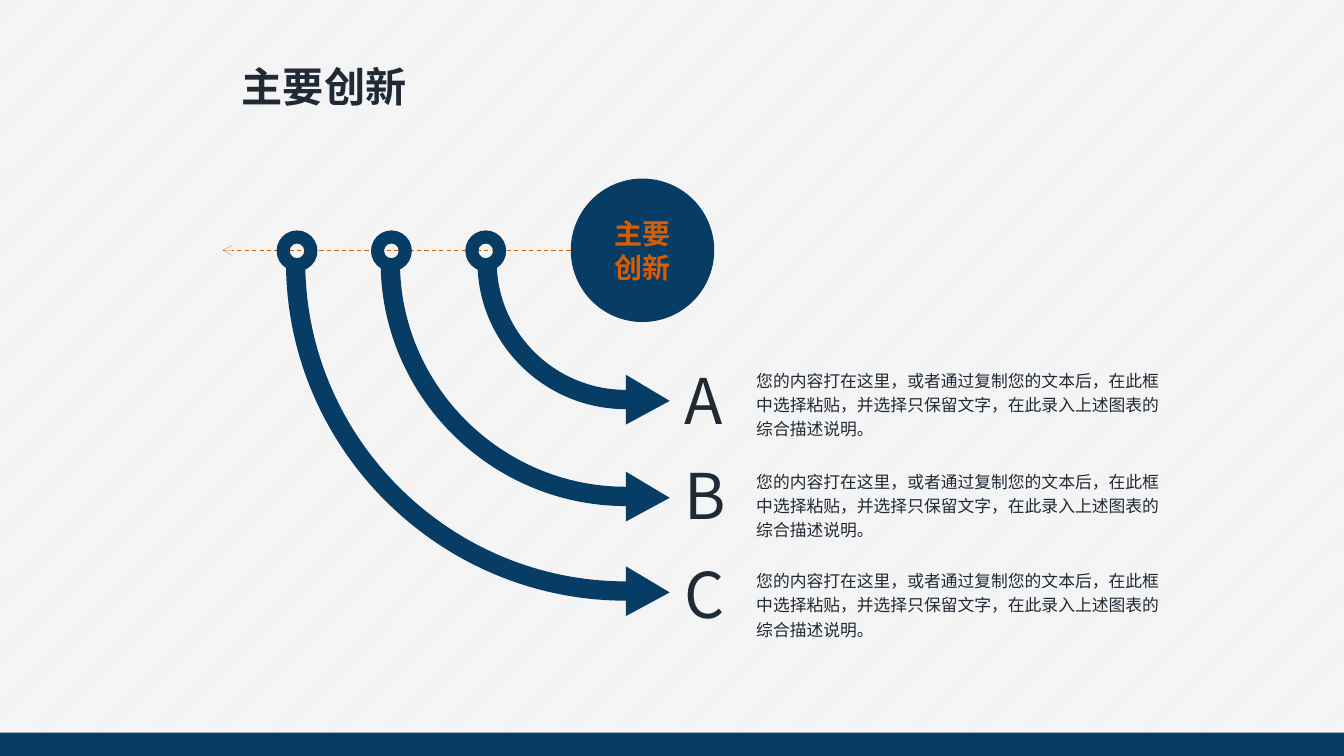
from lxml.etree import SubElement
from pptx import Presentation
from pptx.dml.color import RGBColor
from pptx.enum.dml import MSO_LINE, MSO_PATTERN
from pptx.enum.shapes import MSO_CONNECTOR, MSO_SHAPE
from pptx.enum.text import MSO_ANCHOR, MSO_AUTO_SIZE, PP_ALIGN
from pptx.oxml.ns import qn
from pptx.util import Pt

TITLE = "主要创新"
HUB_LINES = ["主要", "创新"]
DESCRIPTION = "您的内容打在这里，或者通过复制您的文本后，在此框中选择粘贴，并选择只保留文字，在此录入上述图表的综合描述说明。"
BRANCHES = [
    {"letter": "A", "ring_x": 347, "radius": 105.1, "letter_top": 254.9, "letter_width": 43.9, "text_top": 258.8},
    {"letter": "B", "ring_x": 279.6, "radius": 174.3, "letter_top": 323, "letter_width": 40.3, "text_top": 331},
    {"letter": "C", "ring_x": 212.2, "radius": 241.9, "letter_top": 393.4, "letter_width": 42.5, "text_top": 402},
]
COLORS = {"navy": "073C65", "orange": "D85C00", "ink": "202A36", "paper": "F2F2F2", "stripe": "FFFFFF"}
FONT = "Noto Sans CJK SC"
WIDTH, HEIGHT = 960, 540
ARC_X, ARC_Y = 447.1, 187.2
ARC_STRETCH = 0.9
BAND = 13.8
RING_Y, RING_SIZE = 179.2, 29.2
AXIS_Y = 178.8
HUB_LEFT, HUB_SIZE = 407.7, 102.5
CURVE = 0.55
UNITS = 100


def rgb(name):
    return RGBColor.from_string(COLORS[name])


def paint(shape):
    shape.shadow.inherit = False
    shape.fill.solid()
    shape.fill.fore_color.rgb = rgb("navy")
    shape.line.fill.background()
    return shape


def add_preset(slide, kind, left, top, width, height):
    return paint(slide.shapes.add_shape(kind, Pt(left), Pt(top), Pt(width), Pt(height)))


def add_run(paragraph, text, size, color, font=FONT, bold=False):
    run = paragraph.add_run()
    run.text = text
    run.font.size = Pt(size)
    run.font.bold = bold
    run.font.color.rgb = rgb(color)
    run.font.name = font
    SubElement(run.font._element, qn("a:ea"), typeface=FONT)


def set_insets(frame, horizontal, vertical):
    frame.margin_left = frame.margin_right = Pt(horizontal)
    frame.margin_top = frame.margin_bottom = Pt(vertical)


def add_text(slide, box, text, size, insets=(6, 3), wrap=False, anchor=MSO_ANCHOR.TOP,
             spacing=None, font=FONT, bold=False):
    frame = slide.shapes.add_textbox(*map(Pt, box)).text_frame
    set_insets(frame, *insets)
    frame.word_wrap = wrap
    frame.auto_size = MSO_AUTO_SIZE.SHAPE_TO_FIT_TEXT
    frame.vertical_anchor = anchor
    paragraph = frame.paragraphs[0]
    if spacing:
        paragraph.line_spacing = spacing
    add_run(paragraph, text, size, "ink", font, bold)


def bend(segment, start, starts_vertical):
    point = segment.find(qn("a:pt"))
    x0, y0 = (int(start.get(axis)) for axis in "xy")
    x1, y1 = (int(point.get(axis)) for axis in "xy")
    across, down = CURVE * (x1 - x0), CURVE * (y1 - y0)
    if starts_vertical:
        controls = [(x0, y0 + down), (x1 - across, y1)]
    else:
        controls = [(x0 + across, y0), (x1, y1 - down)]
    segment.tag = qn("a:cubicBezTo")
    segment.remove(point)
    for x, y in controls + [(x1, y1)]:
        SubElement(segment, qn("a:pt"), x=str(round(x)), y=str(round(y)))


def add_curved_arrow(slide, radius):
    left, bottom = ARC_X - radius - ARC_STRETCH, ARC_Y + radius
    points = [
        (left, ARC_Y), (ARC_X, bottom),
        (ARC_X, bottom + 11), (ARC_X + 31.3, bottom - 5.9), (ARC_X, bottom - 24.6),
        (ARC_X, bottom - BAND), (left + BAND, ARC_Y),
    ]
    points = [(x * UNITS, y * UNITS) for x, y in points]
    builder = slide.shapes.build_freeform(*points[0], scale=Pt(1) / UNITS)
    builder.add_line_segments(points[1:], close=True)
    arrow = paint(builder.convert_to_shape())
    corners = list(arrow._element.iter(qn("a:pt")))
    segments = list(arrow._element.iter(qn("a:lnTo")))
    bend(segments[0], corners[0], True)
    bend(segments[5], corners[5], False)


def add_hub(slide):
    hub = add_preset(slide, MSO_SHAPE.OVAL, HUB_LEFT, AXIS_Y - HUB_SIZE / 2, HUB_SIZE, HUB_SIZE)
    frame = hub.text_frame
    set_insets(frame, 6, 3)
    frame.vertical_anchor = MSO_ANCHOR.MIDDLE
    for index, text in enumerate(HUB_LINES):
        paragraph = frame.add_paragraph() if index else frame.paragraphs[0]
        paragraph.alignment = PP_ALIGN.CENTER
        add_run(paragraph, text, 20, "orange", bold=True)


def add_axis(slide):
    axis = slide.shapes.add_connector(MSO_CONNECTOR.STRAIGHT, Pt(HUB_LEFT), Pt(AXIS_Y), Pt(159), Pt(AXIS_Y))
    axis.line.color.rgb = rgb("orange")
    axis.line.dash_style = MSO_LINE.DASH
    outline = axis.line._get_or_add_ln()
    outline.set("w", "0")
    SubElement(outline, qn("a:tailEnd"), type="arrow")
    SubElement(axis._element.spPr, qn("a:effectLst"))


def main():
    presentation = Presentation()
    presentation.slide_width, presentation.slide_height = Pt(WIDTH), Pt(HEIGHT)
    slide = presentation.slides.add_slide(presentation.slide_layouts[6])
    background = slide.background.fill
    background.patterned()
    background.pattern = MSO_PATTERN.LIGHT_UPWARD_DIAGONAL
    background.fore_color.rgb = rgb("stripe")
    background.back_color.rgb = rgb("paper")

    add_hub(slide)
    add_axis(slide)
    for branch in BRANCHES:
        ring = add_preset(slide, MSO_SHAPE.DONUT, branch["ring_x"] - RING_SIZE / 2,
                          RING_Y - RING_SIZE / 2, RING_SIZE, RING_SIZE)
        ring.adjustments[0] = 0.32
        add_curved_arrow(slide, branch["radius"])
        add_text(slide, (483.1, branch["letter_top"], branch["letter_width"], 60.5),
                 branch["letter"], 45, anchor=MSO_ANCHOR.MIDDLE)
        add_text(slide, (534.2, branch["text_top"], 305.3, 58.3), DESCRIPTION, 12, wrap=True, spacing=1.2)
    add_text(slide, (165.6, 40.3, 133.2, 42.5), TITLE, 29.4, insets=(7.2, 3.6), font="Arial", bold=True)
    add_preset(slide, MSO_SHAPE.RECTANGLE, 0, 523.4, WIDTH, HEIGHT - 523.4)
    presentation.save("out.pptx")


if __name__ == "__main__":
    main()
